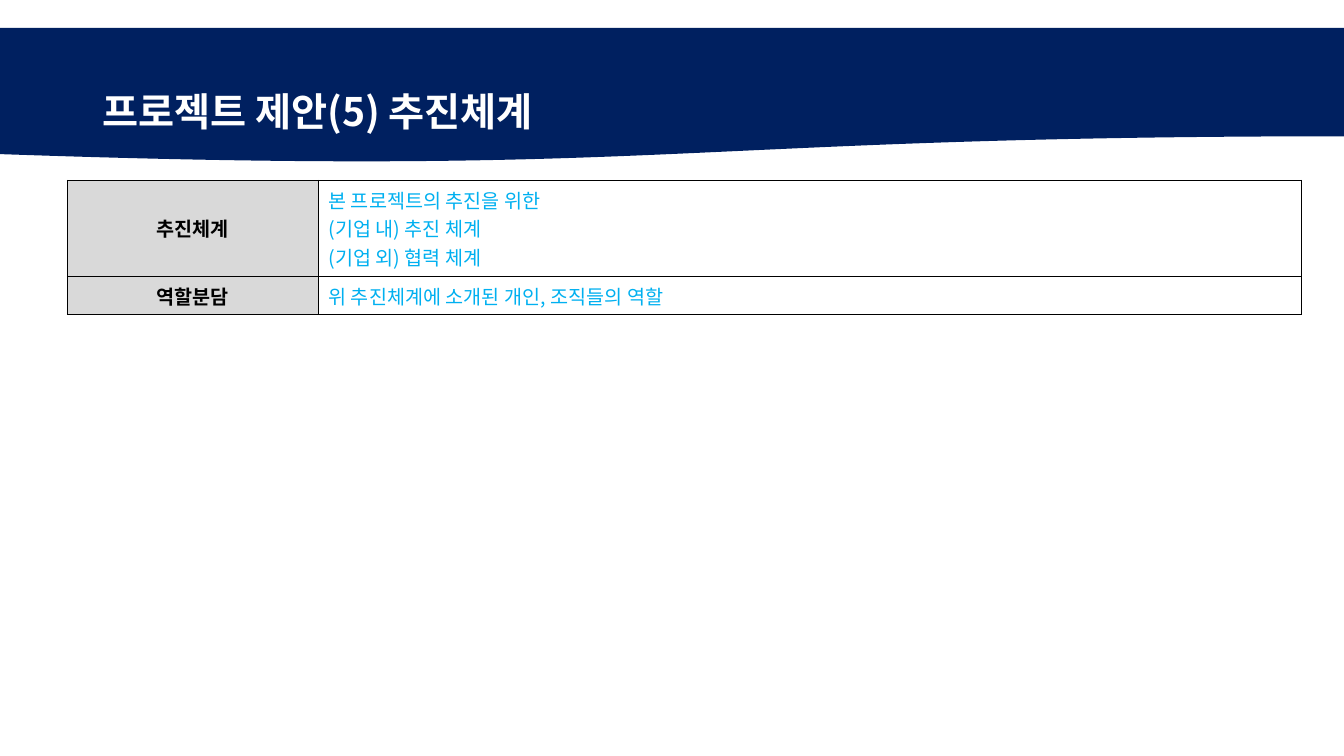
"""Build a slide with a title band and a table of project roles."""
from dataclasses import dataclass

from lxml import etree
from pptx import Presentation
from pptx.dml.color import RGBColor
from pptx.enum.shapes import MSO_SHAPE
from pptx.enum.text import MSO_ANCHOR, PP_ALIGN
from pptx.oxml.ns import qn
from pptx.util import Pt

WAVE = MSO_SHAPE.FLOWCHART_DOCUMENT
MIDDLE = MSO_ANCHOR.MIDDLE
LEFT, CENTER = PP_ALIGN.LEFT, PP_ALIGN.CENTER


@dataclass(frozen=True)
class Theme:
    """Hold the colours, type sizes and font."""
    font: str = "Noto Sans CJK KR"
    navy: str = "002060"
    white: str = "FFFFFF"
    black: str = "000000"
    gray: str = "D9D9D9"
    blue: str = "00B0F0"
    head: int = 28
    body: int = 14
    line: int = 1


class Deck:
    """Draw styled elements on the current slide."""

    def __init__(self, theme, slide):
        """Keep the theme and the slide."""
        self.theme = theme
        self.slide = slide

    def band(self, box, color):
        """Draw a filled band with a wavy lower edge."""
        shape = self.slide.shapes.add_shape(WAVE, *map(Pt, box))
        shape.shadow.inherit = False
        shape.fill.solid()
        shape.fill.fore_color.rgb = RGBColor.from_string(color)
        shape.line.fill.background()

    def text(self, frame, lines, size, color, bold=False, align=LEFT, space=1.0):
        """Set each line as one paragraph."""
        for i, line in enumerate(lines):
            para = frame.add_paragraph() if i else frame.paragraphs[0]
            para.alignment = align
            para.line_spacing = space
            run = para.add_run()
            run.text = line
            font = run.font
            font.name = self.theme.font
            font.size = Pt(size)
            font.bold = bold
            font.color.rgb = RGBColor.from_string(color)
            props = run._r.get_or_add_rPr()
            etree.SubElement(props, qn("a:ea"), typeface=self.theme.font)

    def title(self, box, text):
        """Add the slide title."""
        frame = self.slide.shapes.add_textbox(*map(Pt, box)).text_frame
        frame.word_wrap = True
        frame.vertical_anchor = MIDDLE
        self.text(frame, [text], self.theme.head, self.theme.white, True, space=0.9)

    def edge(self, cell):
        """Draw a thin line on all sides of a cell."""
        props = cell._tc.get_or_add_tcPr()
        for side in "LRTB":
            line = etree.SubElement(props, qn(f"a:ln{side}"), w=str(Pt(self.theme.line)))
            fill = etree.SubElement(line, qn("a:solidFill"))
            etree.SubElement(fill, qn("a:srgbClr"), val=self.theme.black)

    def table(self, spot, widths, heights, rows):
        """Add a table of labels and their text lines."""
        theme = self.theme
        size = sum(widths), sum(heights)
        frame = self.slide.shapes.add_table(
            len(rows), len(widths), *map(Pt, (*spot, *size)))
        grid = frame.table
        grid.first_row = grid.horz_banding = False
        for col, width in zip(grid.columns, widths):
            col.width = Pt(width)
        for row, height, (label, lines) in zip(grid.rows, heights, rows):
            row.height = Pt(height)
            name, note = row.cells
            for cell, color in ((name, theme.gray), (note, theme.white)):
                self.edge(cell)
                cell.vertical_anchor = MIDDLE
                cell.fill.solid()
                cell.fill.fore_color.rgb = RGBColor.from_string(color)
            self.text(name.text_frame, [label], theme.body, theme.black, True, CENTER)
            self.text(note.text_frame, lines, theme.body, theme.blue)


def main():
    """Build and save the slide."""
    show = Presentation()
    show.slide_width, show.slide_height = Pt(960), Pt(540)
    theme = Theme()
    deck = Deck(theme, show.slides.add_slide(show.slide_layouts[6]))
    deck.band((0, 20, 960, 96.5), theme.navy)
    deck.title((66, 28.8, 828, 104.4), "프로젝트 제안(5) 추진체계")
    deck.table((48.2, 128.9), (179.3, 702), (68.4, 27.4), [
        ("추진체계", ["본 프로젝트의 추진을 위한",
                  "(기업 내) 추진 체계",
                  "(기업 외) 협력 체계"]),
        ("역할분담", ["위 추진체계에 소개된 개인, 조직들의 역할"]),
    ])
    show.save("out.pptx")


if __name__ == "__main__":
    main()
